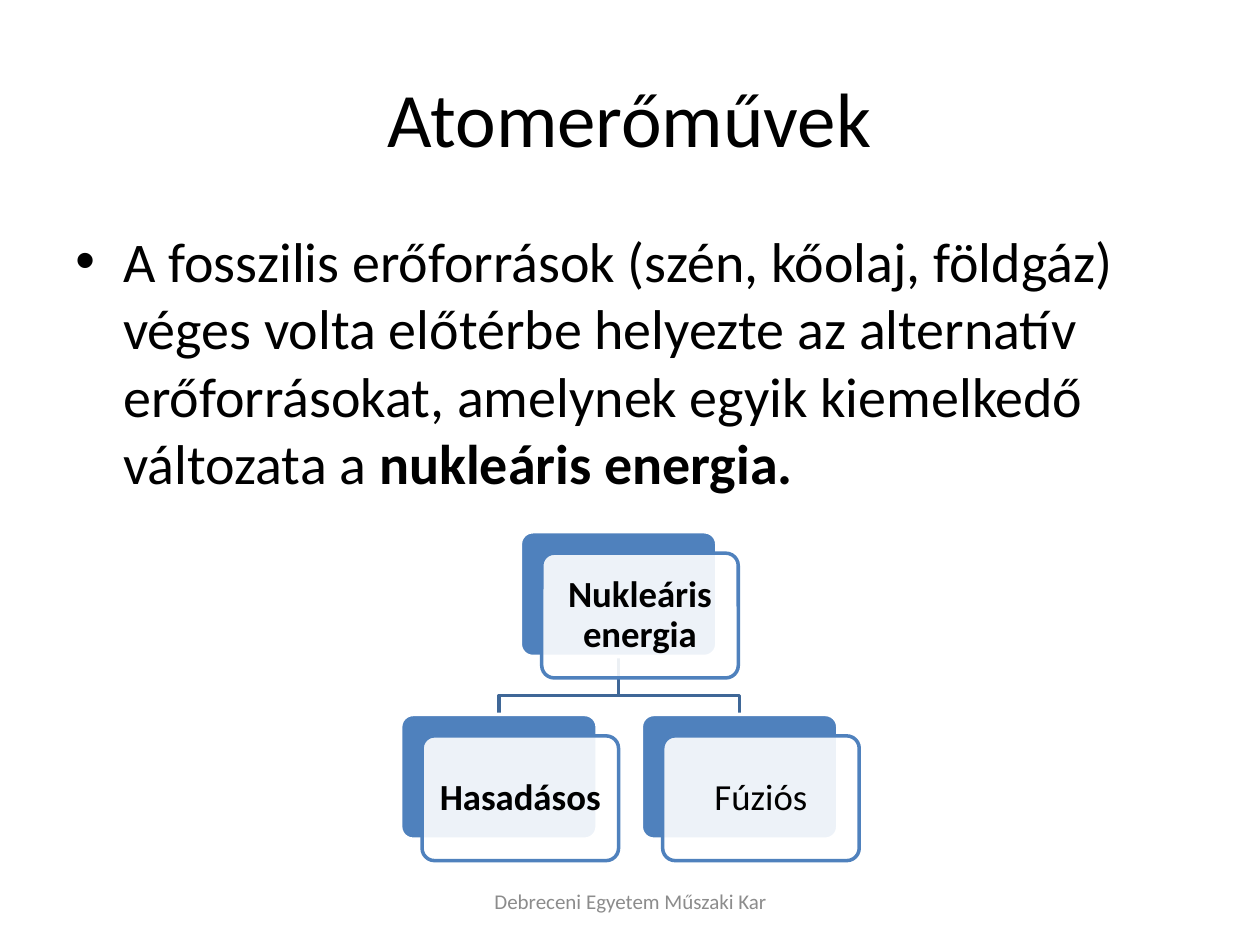
from lxml import etree
from pptx import Presentation
from pptx import util as u
from pptx.dml.color import RGBColor
from pptx.enum import shapes, text
from pptx.oxml.ns import qn

FONT = "Calibri"
BLACK, WHITE, BLUE, DARK_BLUE, GREY = "000000", "FFFFFF", "4F81BD", "3F6797", "8C8C8C"
CARD_W, CARD_H = 1.56, 0.99
OFFSET_X, OFFSET_Y = 0.17, 0.17
ROOT = (4.13, 4.22)
BRANCH_Y, CHILD_Y = 5.52, 5.67


def color(hex_value):
    return RGBColor.from_string(hex_value)


def add_run(paragraph, words, size, hex_value=BLACK, bold=False):
    run = paragraph.add_run()
    run.text = words
    run.font.name = FONT
    run.font.size = u.Pt(size)
    run.font.bold = bold
    run.font.color.rgb = color(hex_value)


def add_text(slide, box, runs, size, hex_value=BLACK,
             align=text.PP_ALIGN.CENTER, anchor=text.MSO_ANCHOR.MIDDLE):
    """Add a one-paragraph text box from (words, bold) pairs; return the paragraph."""
    frame = slide.shapes.add_textbox(*map(u.Inches, box)).text_frame
    frame.word_wrap = True
    frame.vertical_anchor = anchor
    paragraph = frame.paragraphs[0]
    paragraph.alignment = align
    for words, bold in runs:
        add_run(paragraph, words, size, hex_value, bold)
    return paragraph


def add_bullet(paragraph, indent):
    properties = paragraph._p.get_or_add_pPr()
    properties.set("marL", str(u.Inches(indent)))
    properties.set("indent", str(-u.Inches(indent)))
    etree.SubElement(properties, qn("a:buFont")).set("typeface", "Arial")
    etree.SubElement(properties, qn("a:buChar")).set("char", "•")


def add_panel(slide, left, top, fill, line):
    panel = slide.shapes.add_shape(
        shapes.MSO_SHAPE.ROUNDED_RECTANGLE,
        *map(u.Inches, (left, top, CARD_W, CARD_H)))
    panel.adjustments[0] = 0.1
    panel.shadow.inherit = False
    panel.fill.solid()
    panel.fill.fore_color.rgb = color(fill)
    panel.line.color.rgb = color(line)
    panel.line.width = u.Pt(2)
    return panel


def add_card(slide, left, top, label, bold):
    """Add a blue panel with a translucent labelled panel in front of it."""
    add_panel(slide, left, top, BLUE, WHITE)
    front = add_panel(slide, left + OFFSET_X, top + OFFSET_Y, WHITE, BLUE)
    tint = front.fill._xPr.find(qn("a:solidFill"))[0]
    etree.SubElement(tint, qn("a:alpha")).set("val", "90000")
    frame = front.text_frame
    frame.word_wrap = True
    frame.vertical_anchor = text.MSO_ANCHOR.MIDDLE
    frame.margin_left = frame.margin_right = u.Inches(0.06)
    frame.margin_top = frame.margin_bottom = u.Inches(0.06)
    paragraph = frame.paragraphs[0]
    paragraph.alignment = text.PP_ALIGN.CENTER
    paragraph.line_spacing = 0.9
    add_run(paragraph, label, 21, BLACK, bold)


def add_branch(slide, child_left):
    """Add the elbow line from the root panel down to a child panel."""
    root_x = ROOT[0] + CARD_W / 2
    child_x = child_left + CARD_W / 2
    points = [(root_x, ROOT[1] + CARD_H), (root_x, BRANCH_Y),
              (child_x, BRANCH_Y), (child_x, CHILD_Y)]
    start, *rest = [(u.Inches(x), u.Inches(y)) for x, y in points]
    builder = slide.shapes.build_freeform(*start)
    builder.add_line_segments(rest, close=False)
    branch = builder.convert_to_shape()
    branch.shadow.inherit = False
    branch.fill.background()
    branch.line.color.rgb = color(DARK_BLUE)
    branch.line.width = u.Pt(2)


def add_energy_tree(slide):
    children = [(3.18, "Hasadásos", True), (5.09, "Fúziós", False)]
    for left, _, _ in reversed(children):
        add_branch(slide, left)
    add_card(slide, *ROOT, "Nukleáris energia", True)
    for left, label, bold in children:
        add_card(slide, left, CHILD_Y, label, bold)


def main():
    deck = Presentation()
    deck.slide_width, deck.slide_height = u.Inches(10), u.Inches(7.5)
    slide = deck.slides.add_slide(deck.slide_layouts[6])

    add_text(slide, (0.5, 0.3, 9, 1.25), [("Atomerőművek", False)], 44)
    statement = add_text(
        slide, (0.5, 1.75, 9, 4.95),
        [("A fosszilis erőforrások (szén, kőolaj, földgáz) véges volta előtérbe "
          "helyezte az alternatív erőforrásokat, amelynek egyik kiemelkedő "
          "változata a ", False),
         ("nukleáris energia.", True)],
        32, align=text.PP_ALIGN.LEFT, anchor=text.MSO_ANCHOR.TOP)
    statement.space_before = u.Pt(6.4)
    add_bullet(statement, 0.38)
    add_energy_tree(slide)
    add_text(slide, (3.42, 6.95, 3.17, 0.4),
             [("Debreceni Egyetem Műszaki Kar", False)], 12, GREY)

    deck.save("out.pptx")


if __name__ == "__main__":
    main()
